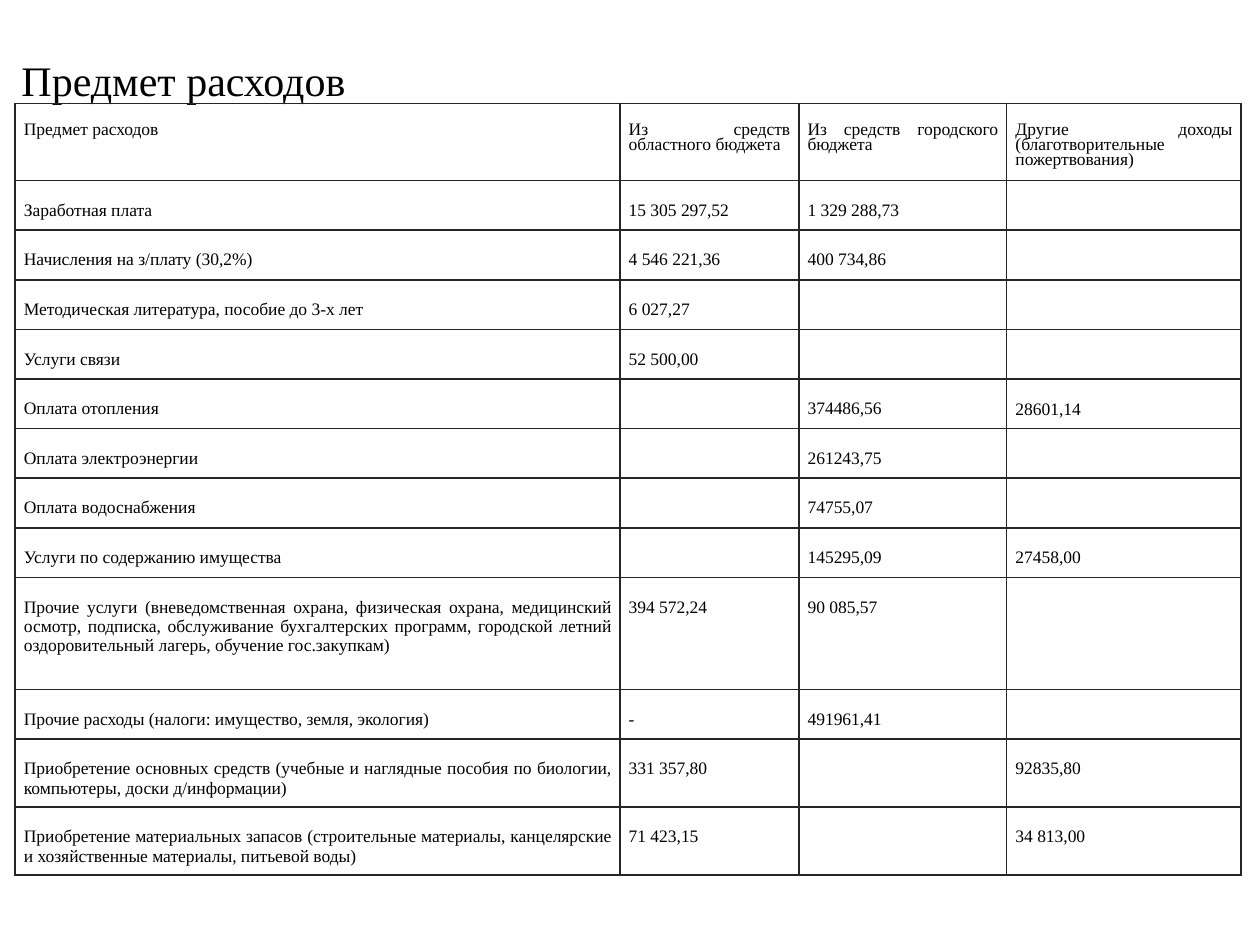
from lxml.etree import SubElement
from pptx import Presentation
from pptx.dml.color import RGBColor
from pptx.enum.text import PP_ALIGN as Align
from pptx.oxml.ns import qn
from pptx.util import Inches, Pt

BLACK = RGBColor(0, 0, 0)
GRID = RGBColor(0x26, 0x26, 0x26)
FONT = "Times New Roman"

COLUMN_WIDTHS = [4.8, 1.42, 1.65, 1.86]
LINE_ROW = 3.15 / 8  # eight one-line rows share this height
ROW_HEIGHTS = [0.61, 0.61] + [LINE_ROW] * 8 + [0.89, LINE_ROW, 0.54, 0.54]
EXPENSES = [
    ("Предмет расходов", "", "", ""),
    ("Предмет расходов", "Из средств областного бюджета", "Из средств городского бюджета",
     "Другие доходы (благотворительные пожертвования)"),
    ("Заработная плата", "15 305 297,52", "1 329 288,73", ""),
    ("Начисления на з/плату (30,2%)", "4 546 221,36", "400 734,86", ""),
    ("Методическая литература, пособие до 3-х лет", "6 027,27", "", ""),
    ("Услуги связи", "52 500,00", "", ""),
    ("Оплата отопления", "", "374486,56", "28601,14"),
    ("Оплата электроэнергии", "", "261243,75", ""),
    ("Оплата водоснабжения", "", "74755,07", ""),
    ("Услуги по содержанию имущества", "", "145295,09", "27458,00"),
    ("Прочие услуги (вневедомственная охрана, физическая охрана, медицинский осмотр, "
     "подписка, обслуживание бухгалтерских программ, городской летний "
     "оздоровительный лагерь, обучение гос.закупкам)", "394 572,24", "90 085,57", ""),
    ("Прочие расходы (налоги: имущество, земля, экология)", "-", "491961,41", ""),
    ("Приобретение основных средств (учебные и наглядные пособия по биологии, "
     "компьютеры, доски д/информации) ", "331 357,80", "", "92835,80"),
    ("Приобретение материальных запасов (строительные материалы, канцелярские "
     "и хозяйственные материалы, питьевой воды)", "71 423,15", "", "34 813,00"),
]

# Row formats: title, column heads, body
TITLE = {"size": 24, "spacing": 0.74, "margins": (0.05, 0.35, 0.05, 0)}
HEAD = {"size": 10, "spacing": 0.78, "margins": (0.07, 0.16, 0.07, 0.07)}
BODY = {**HEAD, "spacing": None}
ROW_FORMATS = [TITLE, HEAD] + [BODY] * (len(EXPENSES) - 2)


def set_borders(cell, drawn_sides):
    properties = cell._tc.get_or_add_tcPr()
    for side in "LRTB":
        line = SubElement(properties, qn(f"a:ln{side}"), w=str(Pt(1)))
        if side in drawn_sides:
            fill = SubElement(line, qn("a:solidFill"))
            SubElement(fill, qn("a:srgbClr"), val=str(GRID))
        else:
            SubElement(line, qn("a:noFill"))


prs = Presentation()
prs.slide_width, prs.slide_height = Inches(10), Inches(7.5)
slide = prs.slides.add_slide(prs.slide_layouts[6])

# Table grid
expenses = slide.shapes.add_table(
    len(ROW_HEIGHTS), len(COLUMN_WIDTHS), Inches(0.12), Inches(0.2),
    Inches(sum(COLUMN_WIDTHS)), Inches(sum(ROW_HEIGHTS))).table
expenses.first_row = expenses.horz_banding = False
for column, width in zip(expenses.columns, COLUMN_WIDTHS):
    column.width = Inches(width)
for row, height in zip(expenses.rows, ROW_HEIGHTS):
    row.height = Inches(height)
expenses.cell(0, 0).merge(expenses.cell(0, 3))

# Cell borders and text
for row, texts, row_format in zip(expenses.rows, EXPENSES, ROW_FORMATS):
    for cell, text in zip(row.cells, texts):
        set_borders(cell, "B" if row_format is TITLE else "LRTB")
        cell.fill.background()
        if not text:
            # Empty cells must not stretch their row
            cell.margin_top = cell.margin_bottom = 0
            continue
        for side, margin in zip(("left", "top", "right", "bottom"), row_format["margins"]):
            setattr(cell, f"margin_{side}", Inches(margin))
        paragraph = cell.text_frame.paragraphs[0]
        paragraph.alignment = Align.JUSTIFY
        paragraph.line_spacing = row_format["spacing"]
        run = paragraph.add_run()
        run.text = text
        run.font.name = FONT
        run.font.size = Pt(row_format["size"])
        run.font.color.rgb = BLACK

# The heating payment from other income is left-aligned
heating_income = expenses.cell(6, 3)
heating_income.margin_top = Inches(0.17)
heating_income.text_frame.paragraphs[0].alignment = Align.LEFT

prs.save("out.pptx")
